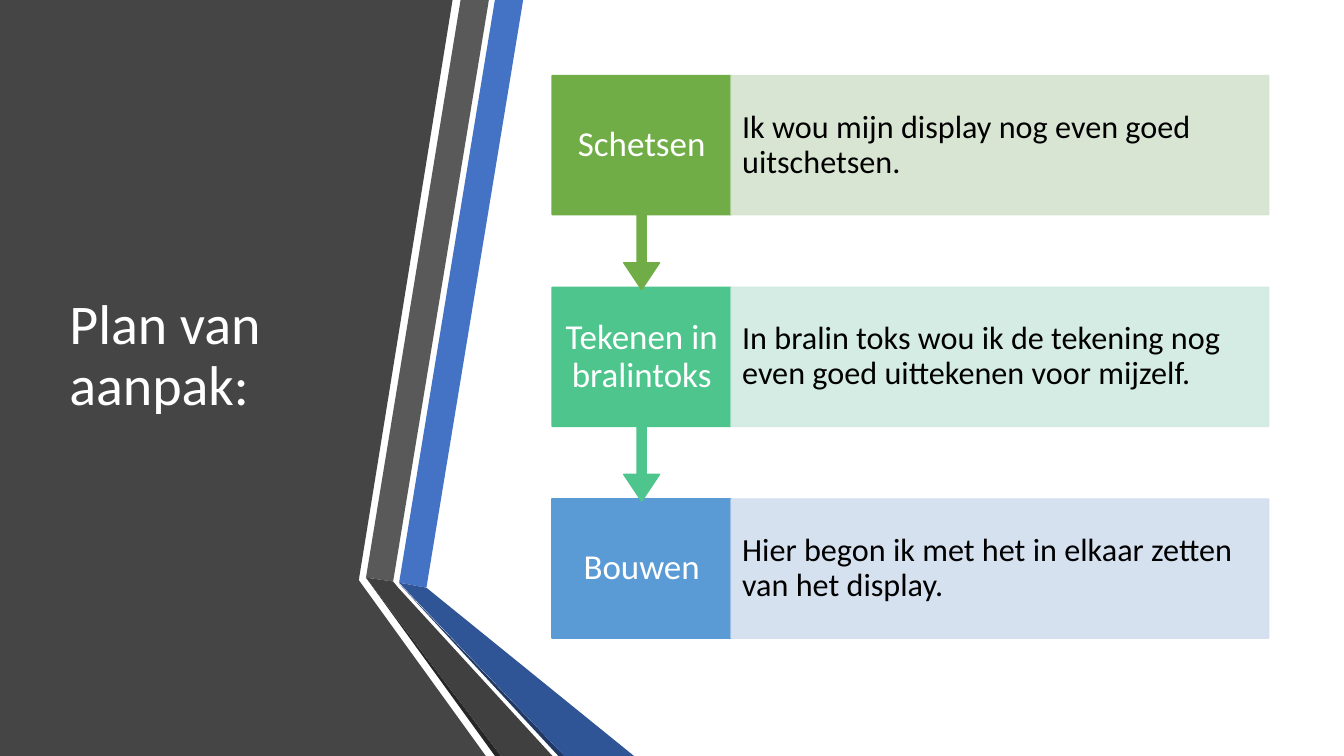
"""Build the "Plan van aanpak" slide with a folded ribbon and three process steps."""
from lxml import etree
from pptx import Presentation
from pptx.dml.color import RGBColor
from pptx.enum.shapes import MSO_SHAPE
from pptx.enum.text import MSO_ANCHOR, PP_ALIGN
from pptx.oxml.ns import qn
from pptx.util import Pt

RECT, CALLOUT = MSO_SHAPE.RECTANGLE, MSO_SHAPE.DOWN_ARROW_CALLOUT
LEFT, CENTER, MIDDLE = PP_ALIGN.LEFT, PP_ALIGN.CENTER, MSO_ANCHOR.MIDDLE


def paint(s, color, line=True, alpha=100):
    s.shadow.inherit = False
    s.fill.solid()
    s.fill.fore_color.rgb = RGBColor.from_string(color)
    if line:
        s.line.width = Pt(1)
        s.line.color.rgb = RGBColor.from_string(color)
    else:
        s.line.fill.background()
    if alpha < 100:
        for clr in s.fill._xPr.iter(qn("a:srgbClr")):
            etree.SubElement(clr, qn("a:alpha"), val=str(alpha * 1000))


def write(s, text, size, color, align=LEFT, inset_x=7.2, inset_y=3.6):
    tf = s.text_frame
    tf.word_wrap = True
    tf.vertical_anchor = MIDDLE
    tf.margin_left = tf.margin_right = Pt(inset_x)
    tf.margin_top = tf.margin_bottom = Pt(inset_y)
    p = tf.paragraphs[0]
    p.alignment = align
    p.line_spacing = 0.9
    r = p.add_run()
    r.text = text
    r.font.name = "Calibri"
    r.font.size = Pt(size)
    r.font.color.rgb = RGBColor.from_string(color)


prs = Presentation()
prs.slide_width, prs.slide_height = Pt(960), Pt(540)
slide = prs.slides.add_slide(prs.slide_layouts[6])

ribbon = [
    ("454545", [(0, 0), (323.3, 0), (256.3, 414.4), (347, 540), (0, 540)]),
    ("4472C4", [(285.1, 416.2), (304.6, 419.8), (373.7, 0), (353.5, 0)]),
    ("595959", [(349.2, 0), (329, 0), (261.4, 412.6), (280.8, 415.4)]),
    ("262626", [(261.4, 412.6), (353.5, 540), (357.8, 540)]),
    ("203864", [(285.1, 416.9), (398.9, 540), (403.2, 540)]),
    ("2F5597", [(285.1, 416.2), (403.2, 540), (452.9, 540), (304.6, 419.8)]),
    ("404040", [(394.6, 540), (284.4, 419.8), (280.8, 415.4), (261.4, 412.6), (357.8, 540)]),
]
for color, points in ribbon:
    corners = [(Pt(x), Pt(y)) for x, y in points]
    builder = slide.shapes.build_freeform(*corners[0])
    builder.add_line_segments(corners[1:], close=True)
    paint(builder.convert_to_shape(), color, line=False)

title = slide.shapes.add_textbox(Pt(42.5), Pt(54), Pt(218.9), Pt(401.8))
write(title, "Plan van aanpak:", 40, "FFFFFF")

steps = [
    ("Schetsen", "70AD47", "D5E3CF",
     "Ik wou mijn display nog even goed uitschetsen."),
    ("Tekenen in bralintoks", "4DC58D", "D0EAE1",
     "In bralin toks wou ik de tekening nog even goed uittekenen voor mijzelf."),
    ("Bouwen", "5B9BD5", "D2DEEF",
     "Hier begon ik met het in elkaar zetten van het display."),
]
left, top, pitch = 394.4, 54, 151.2
label_w, detail_w, box_h, callout_h = 127.8, 384, 99.4, 152.9
last = len(steps) - 1

for i, (label, dark, light, detail) in reversed(list(enumerate(steps))):
    y = Pt(top + i * pitch)
    kind, height = (RECT, box_h) if i == last else (CALLOUT, callout_h)
    s = slide.shapes.add_shape(kind, Pt(left), y, Pt(label_w), Pt(height))
    if kind == CALLOUT:
        for n, value in enumerate((0.05, 0.1, 0.15, 0.65)):
            s.adjustments[n] = value
    paint(s, dark)
    write(s, label, 25, "FFFFFF", align=CENTER, inset_x=9.4, inset_y=13.7)

    s = slide.shapes.add_shape(RECT, Pt(left + label_w), y, Pt(detail_w), Pt(box_h))
    paint(s, light, alpha=90)
    write(s, detail, 23, "000000", inset_x=7.9, inset_y=23)

prs.save("out.pptx")
